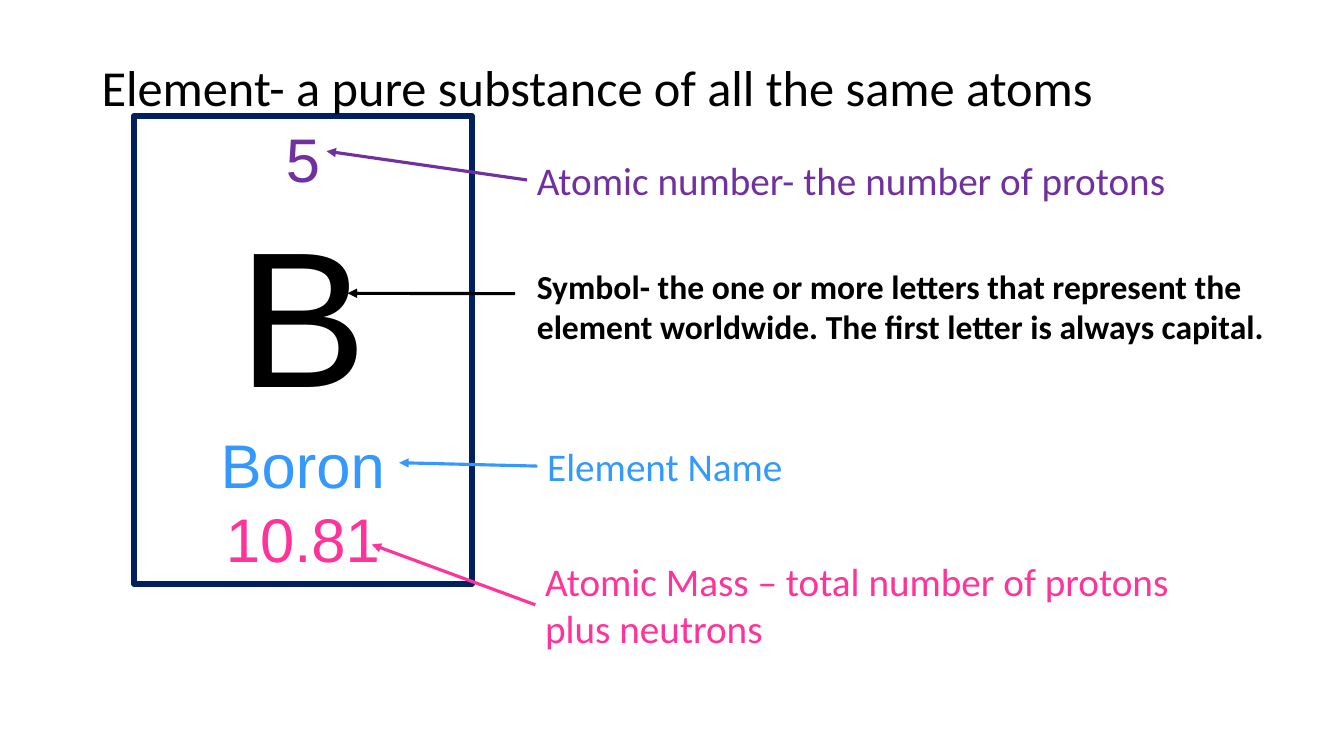
import pptx
import pptx.dml.color
import pptx.enum.shapes
import pptx.enum.text
import pptx.util
from pptx.util import Cm

PURPLE = "7030A0"
BLACK = "000000"
BLUE = "3399FF"
PINK = "FF3399"
NAVY = "002060"


def colour(value):
    return pptx.dml.color.RGBColor.from_string(value)


def write(para, text, size=28, color=BLACK, font="Calibri", bold=False,
          align=pptx.enum.text.PP_ALIGN.LEFT):
    para.alignment = align
    span = para.add_run()
    span.text = text
    span.font.name = font
    span.font.size = pptx.util.Pt(size)
    span.font.bold = bold
    span.font.color.rgb = colour(color)


def fit_frame(shape):
    frame = shape.text_frame
    frame.word_wrap = True
    frame.auto_size = pptx.enum.text.MSO_AUTO_SIZE.SHAPE_TO_FIT_TEXT
    frame.vertical_anchor = pptx.enum.text.MSO_ANCHOR.TOP
    return frame


def add_label(page, text, left, top, width, height, **style):
    box = page.shapes.add_textbox(Cm(left), Cm(top), Cm(width), Cm(height))
    write(fit_frame(box).paragraphs[0], text, **style)
    return box


def add_element_card(page, left, top, width, height, rows):
    card = page.shapes.add_shape(pptx.enum.shapes.MSO_SHAPE.RECTANGLE,
                                 Cm(left), Cm(top), Cm(width), Cm(height))
    card.shadow.inherit = False
    card.fill.background()
    card.line.color.rgb = colour(NAVY)
    card.line.width = pptx.util.Pt(4.5)
    frame = fit_frame(card)
    for index, (text, size, color) in enumerate(rows):
        para = frame.add_paragraph() if index else frame.paragraphs[0]
        write(para, text, size=size, color=color, font="Arial",
              align=pptx.enum.text.PP_ALIGN.CENTER)


def add_arrow(page, start, tip, color, label=None):
    arrow = page.shapes.add_connector(
        pptx.enum.shapes.MSO_CONNECTOR.STRAIGHT,
        Cm(start[0]), Cm(start[1]), Cm(tip[0]), Cm(tip[1]))
    if label is not None:
        arrow.begin_connect(label, 1)
    arrow.line.color.rgb = colour(color)
    arrow.line.width = pptx.util.Pt(2.25)
    properties = arrow.line._get_or_add_ln()
    tail = pptx.oxml.xmlchemy.OxmlElement("a:tailEnd")
    tail.set("type", "triangle")
    properties.append(tail)
    arrow._element.spPr.append(pptx.oxml.xmlchemy.OxmlElement("a:effectLst"))


def main():
    deck = pptx.Presentation()
    deck.slide_width, deck.slide_height = Cm(33.87), Cm(19.05)
    page = deck.slides.add_slide(deck.slide_layouts[6])

    add_element_card(page, 3.38, 2.92, 8.51, 11.79, [
        ("5", 44, PURPLE), ("B", 138, BLACK),
        ("Boron", 44, BLUE), ("10.81", 44, PINK)])
    add_label(page, "Symbol- the one or more letters that represent the element "
              "worldwide. The first letter is always capital.",
              13.28, 6.58, 19.58, 2.31, size=24, bold=True)
    add_label(page, "Element- a pure substance of all the same atoms",
              2.31, 1.3, 29.24, 1.8, size=36)
    number = add_label(page, "Atomic number- the number of protons",
                       13.28, 3.81, 19.23, 1.45, color=PURPLE)
    name = add_label(page, "Element Name", 13.54, 11.02, 16.94, 1.45, color=BLUE)
    mass = add_label(page, "Atomic Mass – total number of protons plus neutrons",
                     13.49, 13.92, 16.94, 2.64, color=PINK)

    add_arrow(page, (13.28, 4.54), (8.23, 3.81), PURPLE, number)
    add_arrow(page, (12.98, 7.4), (8.76, 7.39), BLACK)
    add_arrow(page, (13.54, 11.75), (10.06, 11.66), BLUE, name)
    add_arrow(page, (13.49, 15.24), (9.37, 13.72), PINK, mass)
    deck.save("out.pptx")


if __name__ == "__main__":
    main()
